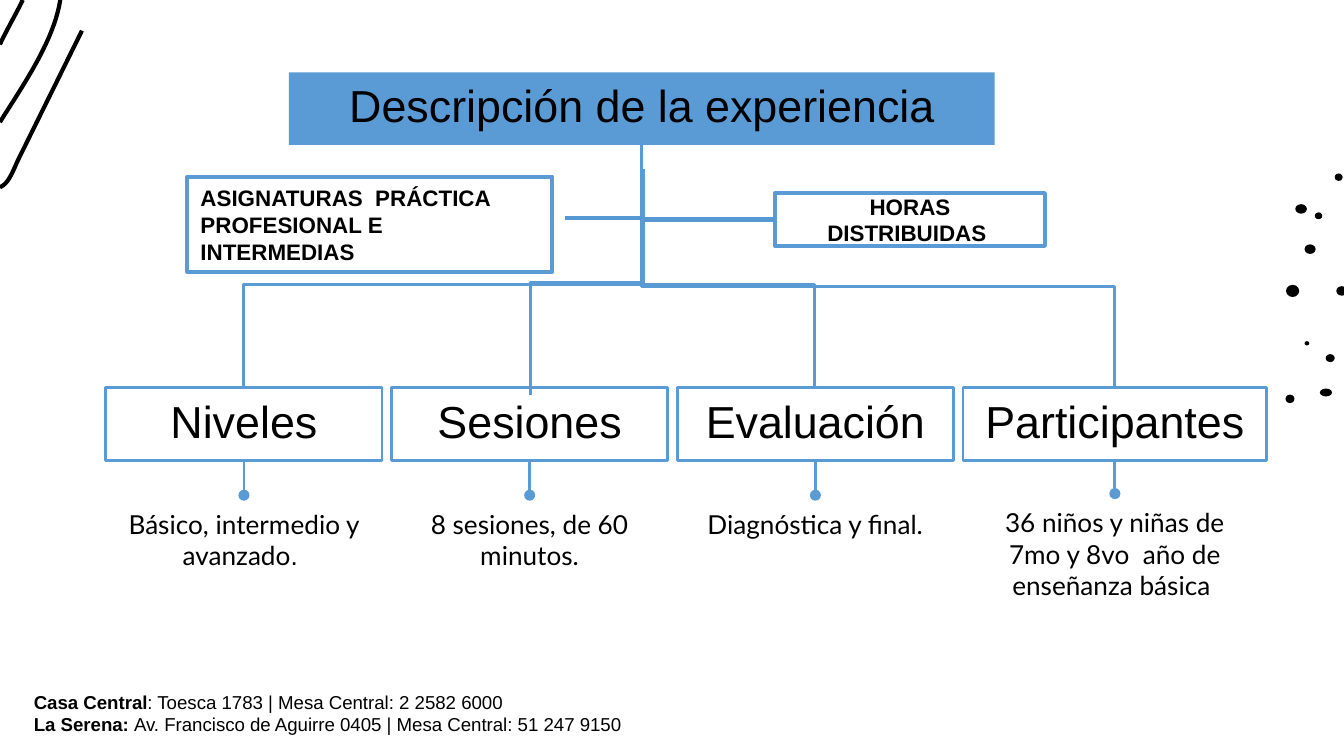
"""Build the slide that describes the teaching experience as a tree diagram."""
from lxml.etree import SubElement
from pptx import Presentation
from pptx.dml.color import RGBColor
from pptx.enum.shapes import MSO_CONNECTOR as Connector, MSO_SHAPE as Shape
from pptx.enum.text import MSO_ANCHOR as Anchor, PP_ALIGN as Align
from pptx.oxml.ns import qn
from pptx.util import Cm, Pt

BLACK = RGBColor(0x00, 0x00, 0x00)
WHITE = RGBColor(0xFF, 0xFF, 0xFF)
BLUE = RGBColor(0x5B, 0x9B, 0xD5)
LINK_BLUE = RGBColor(0x56, 0x98, 0xD3)


def add_text(shape, text, size=24, bold=False, font="Arial", align=Align.CENTER,
             anchor=Anchor.BOTTOM, inset=(0.25, 0.25)):
    frame = shape.text_frame
    frame.word_wrap = True
    frame.vertical_anchor = anchor
    frame.margin_left = frame.margin_right = Cm(inset[0])
    frame.margin_top = frame.margin_bottom = Cm(inset[1])
    paragraph = frame.paragraphs[0]
    paragraph.alignment = align
    run = paragraph.add_run()
    run.text = text
    run.font.size = Pt(size)
    run.font.bold = bold
    run.font.name = font
    run.font.color.rgb = BLACK


def add_line(kind, begin, end, color=BLUE, width=1.5):
    line = slide.shapes.add_connector(kind, *(Cm(value) for value in begin + end))
    line.line.color.rgb = color
    line.line.width = Pt(width)
    SubElement(line._element.spPr, qn("a:effectLst"))
    return line


presentation = Presentation()
presentation.slide_width = Cm(25.4)
presentation.slide_height = Cm(14.29)
slide = presentation.slides.add_slide(presentation.slide_layouts[6])

footer = slide.shapes.add_textbox(Cm(0.39), Cm(12.92), Cm(13.89), Cm(1.12))
footer_format = dict(size=10, align=Align.LEFT, anchor=Anchor.TOP, inset=(0.25, 0.13))
add_text(footer, "Casa Central", bold=True, **footer_format)
add_text(footer, ": Toesca 1783 | Mesa Central: 2 2582 6000", **footer_format)
footer.text_frame.paragraphs[0].add_line_break()
add_text(footer, "La Serena: ", bold=True, **footer_format)
add_text(footer, "Av. Francisco de Aguirre 0405 | Mesa Central: 51 247 9150", **footer_format)

strokes = [
    ([], [(0.43, 0), (0.33, 0.22), (0.14, 0.54), (0, 0.84)]),
    ([], [(1.14, 0), (1.02, 0.79), (0.41, 1.65), (0, 2.31)]),
    ([(1.55, 0.58)], [(0.33, 3.05), (0.23, 3.28), (0.15, 3.48), (0, 3.54)]),
]
for start, curve in strokes:
    points = list(start)
    for step in range(21):
        t = step / 20
        weights = ((1 - t) ** 3, 3 * t * (1 - t) ** 2, 3 * t ** 2 * (1 - t), t ** 3)
        points.append(tuple(sum(weight * point[axis] for weight, point in zip(weights, curve))
                            for axis in (0, 1)))
    points = [(Cm(x), Cm(y)) for x, y in points]
    builder = slide.shapes.build_freeform(*points[0])
    builder.add_line_segments(points[1:], close=False)
    stroke = builder.convert_to_shape()
    stroke.shadow.inherit = False
    stroke.fill.background()
    stroke.line.color.rgb = BLACK
    stroke.line.width = Pt(2.25)

dots = [
    (24.38, 7.54, 0.17, 0.16), (25.36, 5.5, 0.21, 0.18), (24.76, 4.71, 0.21, 0.18),
    (24.92, 4.08, 0.14, 0.13), (24.59, 3.95, 0.22, 0.18), (25.3, 3.35, 0.15, 0.14),
    (24.43, 5.5, 0.25, 0.23), (25.06, 7.42, 0.23, 0.15), (25.14, 6.77, 0.17, 0.15),
    (24.7, 6.49, 0.09, 0.08),
]
for center_x, center_y, width, height in dots:
    dot = slide.shapes.add_shape(Shape.OVAL, Cm(center_x - width / 2), Cm(center_y - height / 2),
                                 Cm(width), Cm(height))
    dot.shadow.inherit = False
    dot.fill.solid()
    dot.fill.fore_color.rgb = BLACK
    dot.line.fill.background()

title = slide.shapes.add_shape(Shape.RECTANGLE, Cm(5.46), Cm(1.37), Cm(13.34), Cm(1.37))
title.shadow.inherit = False
title.fill.solid()
title.fill.fore_color.rgb = BLUE
title.line.fill.background()
add_text(title, "Descripción de la experiencia")

branches = [
    ((12.17, 3.2), (10.03, 7.47), 50000),
    ((12.13, 3.43), (4.6, 7.33), 50000),
    ((12.13, 2.74), (21.06, 7.33), 58200),
    ((12.13, 3.43), (15.4, 7.33), 50000),
]
for (x1, y1), (x2, y2), bend in branches:
    center_x, center_y = (x1 + x2) / 2, (y1 + y2) / 2
    half_x, half_y = (x2 - x1) / 2, (y2 - y1) / 2
    branch = add_line(Connector.ELBOW, (center_x - half_y, center_y + half_x),
                      (center_x + half_y, center_y - half_x))
    properties = branch._element.spPr
    properties.find(qn("a:xfrm")).set("rot", "5400000")
    adjustments = properties.find(qn("a:prstGeom")).get_or_add_avLst()
    SubElement(adjustments, qn("a:gd"), name="adj1", fmla=f"val {bend}")

columns = [
    ("Niveles", "Básico, intermedio y avanzado", 5.22, 9.36),
    ("Sesiones", "8 sesiones, de 60 minutos.", 5.22, 9.36),
    ("Evaluación", "Diagnóstica y final.", 5.22, 9.36),
    ("Participantes", "36 niños y niñas de 7mo y 8vo  año de enseñanza básica ", 5.74, 9.33),
]
for index, (heading, description, width, top) in enumerate(columns):
    left = 2 + 5.4 * index
    box = slide.shapes.add_shape(Shape.RECTANGLE, Cm(left), Cm(7.33), Cm(width), Cm(1.38))
    box.shadow.inherit = False
    box.fill.background()
    box.line.color.rgb = BLUE
    box.line.width = Pt(1.5)
    add_text(box, heading)

    detail = slide.shapes.add_textbox(Cm(left + (width - 5.22) / 2), Cm(top), Cm(5.22), Cm(2.18))
    add_text(detail, description, size=14, font="Lato", anchor=Anchor.TOP)
    if heading == "Niveles":
        add_text(detail, ". ", size=14, anchor=Anchor.TOP)

    center = left + width / 2
    stem = add_line(Connector.STRAIGHT, (center, 8.71), (center, top))
    stem.begin_connect(box, 2)
    stem.end_connect(detail, 0)
    SubElement(stem.line._get_or_add_ln(), qn("a:tailEnd"), type="oval")

side_boxes = [
    ("ASIGNATURAS  PRÁCTICA PROFESIONAL E INTERMEDIAS", 3.54, 3.34, 6.9, 1.8, Align.LEFT),
    ("HORAS DISTRIBUIDAS ", 14.65, 3.65, 5.1, 1, Align.CENTER),
]
for text, left, top, width, height, align in side_boxes:
    side_box = slide.shapes.add_shape(Shape.RECTANGLE, Cm(left), Cm(top), Cm(width), Cm(height))
    side_box.shadow.inherit = False
    side_box.fill.solid()
    side_box.fill.fore_color.rgb = WHITE
    side_box.line.color.rgb = BLUE
    side_box.line.width = Pt(2)
    add_text(side_box, text, size=12, bold=True, align=align, anchor=Anchor.MIDDLE,
             inset=(0.25, 0.13))

add_line(Connector.STRAIGHT, (12.13, 4.12), (10.67, 4.12), LINK_BLUE, 2.25)
hours_link = add_line(Connector.STRAIGHT, (12.17, 4.15), (14.65, 4.15), LINK_BLUE, 2.25)
hours_link.end_connect(side_box, 1)

presentation.save("out.pptx")
